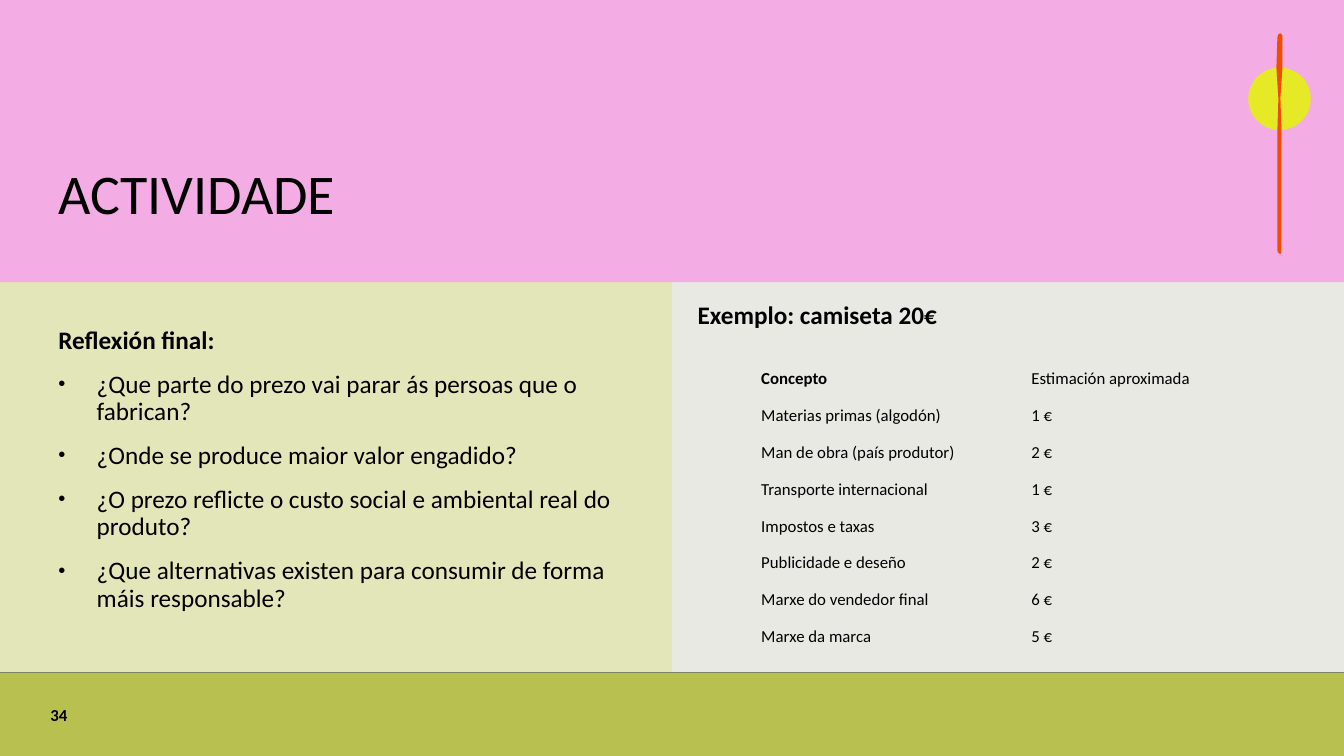
import pptx
import pptx.dml.color
import pptx.enum.shapes
import pptx.enum.text
import pptx.oxml.ns
import pptx.oxml.xmlchemy
import pptx.util
from pptx.util import Inches

RGBColor = pptx.dml.color.RGBColor
MSO_SHAPE = pptx.enum.shapes.MSO_SHAPE
ANCHOR = pptx.enum.text.MSO_ANCHOR

BACKGROUND = RGBColor(0xE8, 0xE9, 0xE2)
PINK = RGBColor(0xF4, 0xAD, 0xE4)
PALE_GREEN = RGBColor(0xE3, 0xE6, 0xB9)
GREEN = RGBColor(0xB8, 0xC0, 0x4F)
RULE = RGBColor(0x7E, 0x82, 0x63)
YELLOW = RGBColor(0xE6, 0xE9, 0x26)
ORANGE = RGBColor(0xF1, 0x4D, 0x02)
BLACK = RGBColor(0, 0, 0)

FONT = "Calibri"
NO_STYLE_NO_GRID = "{2D5ABB26-0587-4C30-8999-92F81FD0307C}"
WIDTH, HEIGHT = 13.33, 7.5
HEADER_BOTTOM, FOOTER_TOP = 2.8, 6.67

QUESTIONS = [
    "¿Que parte do prezo vai parar ás persoas que o fabrican?",
    "¿Onde se produce maior valor engadido?",
    "¿O prezo reflicte o custo social e ambiental real do produto?",
    "¿Que alternativas existen para consumir de forma máis responsable?",
]
PRICE_ROWS = [
    ("Concepto", "Estimación aproximada"),
    ("Materias primas (algodón)", "1 €"),
    ("Man de obra (país produtor)", "2 €"),
    ("Transporte internacional", "1 €"),
    ("Impostos e taxas", "3 €"),
    ("Publicidade e deseño", "2 €"),
    ("Marxe do vendedor final", "6 €"),
    ("Marxe da marca", "5 €"),
]
STROKE_OUTLINE = [
    (12.66, 0.67), (12.67, 0.37), (12.68, 0.34), (12.7, 0.33), (12.72, 0.35),
    (12.72, 0.67), (12.7, 0.97), (12.71, 1.28), (12.71, 2.5), (12.7, 2.52),
    (12.68, 2.51), (12.67, 2.49), (12.67, 1.29), (12.68, 0.98),
]


def paint(shape, color):
    shape.shadow.inherit = False
    shape.fill.solid()
    shape.fill.fore_color.rgb = color
    shape.line.fill.background()


def add_block(slide, kind, left, top, width, height, color):
    block = slide.shapes.add_shape(
        kind, Inches(left), Inches(top), Inches(width), Inches(height))
    paint(block, color)


def add_rule(slide, top):
    rule = slide.shapes.add_connector(
        pptx.enum.shapes.MSO_CONNECTOR.STRAIGHT,
        0, Inches(top), Inches(WIDTH), Inches(top))
    rule.line.color.rgb = RULE
    rule.line.width = pptx.util.Pt(1)
    rule._element.spPr.append(pptx.oxml.xmlchemy.OxmlElement("a:effectLst"))


def add_stroke(slide):
    points = [(Inches(x), Inches(y)) for x, y in STROKE_OUTLINE]
    builder = slide.shapes.build_freeform(*points[0])
    builder.add_line_segments(points[1:], close=True)
    paint(builder.convert_to_shape(), ORANGE)


def format_text(paragraph, size, bold=False):
    for run in paragraph.runs:
        run.font.name = FONT
        run.font.size = pptx.util.Pt(size)
        run.font.bold = bold
        run.font.color.rgb = BLACK


def add_text(slide, left, top, width, height, text, size, bold=False,
             anchor=ANCHOR.TOP, line_spacing=0.9):
    frame = slide.shapes.add_textbox(
        Inches(left), Inches(top), Inches(width), Inches(height)).text_frame
    frame.word_wrap = True
    frame.margin_left = frame.margin_right = 0
    frame.margin_top = frame.margin_bottom = 0
    frame.vertical_anchor = anchor
    frame.text = text
    frame.paragraphs[0].line_spacing = line_spacing
    format_text(frame.paragraphs[0], size, bold)
    return frame


def add_bullet(frame, text):
    paragraph = frame.add_paragraph()
    paragraph.text = text
    paragraph.line_spacing = 0.9
    paragraph.space_before = pptx.util.Pt(12)
    format_text(paragraph, 18)
    properties = paragraph._p.get_or_add_pPr()
    properties.set("marL", str(Inches(0.38)))
    properties.set("indent", str(Inches(-0.38)))
    for tag, name, value in (("a:buSzPct", "val", "80000"),
                             ("a:buFont", "typeface", "Arial"),
                             ("a:buChar", "char", "•")):
        mark = pptx.oxml.xmlchemy.OxmlElement(tag)
        mark.set(name, value)
        properties.append(mark)


def add_price_table(slide):
    row_height = 2.92 / len(PRICE_ROWS)
    table = slide.shapes.add_table(
        len(PRICE_ROWS), 2, Inches(7.5), Inches(3.58),
        Inches(4.75), Inches(2.92)).table
    table.first_row = table.horz_banding = False
    table._tbl.tblPr.find(
        pptx.oxml.ns.qn("a:tableStyleId")).text = NO_STYLE_NO_GRID
    for column, width in zip(table.columns, (2.68, 2.07)):
        column.width = Inches(width)
    for r, values in enumerate(PRICE_ROWS):
        table.rows[r].height = Inches(row_height)
        for c, value in enumerate(values):
            cell = table.cell(r, c)
            cell.fill.background()
            cell.vertical_anchor = ANCHOR.MIDDLE
            cell.margin_left = cell.margin_right = Inches(0.05)
            cell.margin_top = cell.margin_bottom = Inches(0.03)
            cell.text_frame.text = value
            format_text(cell.text_frame.paragraphs[0], 12, r == c == 0)


def main():
    deck = pptx.Presentation()
    deck.slide_width, deck.slide_height = Inches(WIDTH), Inches(HEIGHT)
    slide = deck.slides.add_slide(deck.slide_layouts[6])
    slide.background.fill.solid()
    slide.background.fill.fore_color.rgb = BACKGROUND

    # Colour areas
    add_block(slide, MSO_SHAPE.RECTANGLE, 0, HEADER_BOTTOM,
              WIDTH / 2, HEIGHT - HEADER_BOTTOM, PALE_GREEN)
    add_block(slide, MSO_SHAPE.RECTANGLE, 0, FOOTER_TOP,
              WIDTH, HEIGHT - FOOTER_TOP, GREEN)
    add_block(slide, MSO_SHAPE.RECTANGLE, 0, 0, WIDTH, HEADER_BOTTOM, PINK)
    add_rule(slide, FOOTER_TOP)

    # Ornament: disc and brush stroke
    add_block(slide, MSO_SHAPE.OVAL, 12.38, 0.67, 0.62, 0.62, YELLOW)
    add_stroke(slide)

    # Title and reflection questions
    add_text(slide, 0.58, 0.45, 11.52, 1.8, "ACTIVIDADE", 40,
             anchor=ANCHOR.BOTTOM)
    reflection = add_text(slide, 0.58, 3.25, 5.53, 2.92,
                          "Reflexión final:", 18, bold=True)
    for question in QUESTIONS:
        add_bullet(reflection, question)

    # Price example
    add_text(slide, 6.92, 3, 5.53, 0.33, "Exemplo: camiseta 20€", 18, bold=True)
    add_price_table(slide)

    # Page number
    add_text(slide, 0.5, 6.89, 0.7, 0.3, "34", 12, bold=True,
             anchor=ANCHOR.BOTTOM, line_spacing=1.0)

    deck.save("out.pptx")


if __name__ == "__main__":
    main()
